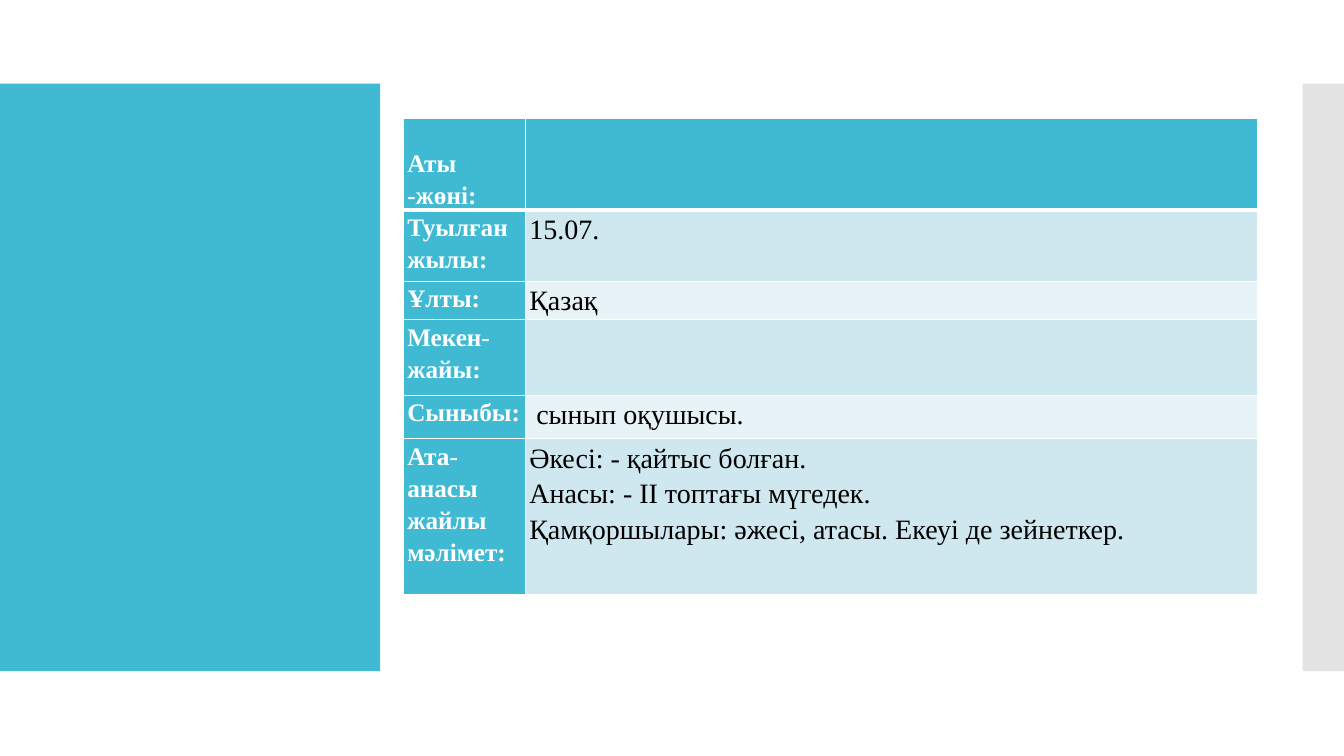
from dataclasses import dataclass

from lxml.etree import SubElement
from pptx import Presentation
from pptx.dml.color import RGBColor
from pptx.enum.shapes import MSO_SHAPE
from pptx.enum.text import MSO_ANCHOR
from pptx.oxml.ns import qn
from pptx.util import Inches, Pt


@dataclass(frozen=True)
class Theme:
    """Colours, font and type sizes of the slide."""
    accent: str = "40BAD2"
    side_strip: str = "C8C8C8"
    dark_band: str = "CFE7EE"
    light_band: str = "E8F3F7"
    white: str = "FFFFFF"
    black: str = "000000"
    font: str = "Times New Roman"
    label_size: int = 18
    value_size: int = 20
    line_spacing: float = 1.15
    rule: int = 1
    header_rule: int = 3


THEME = Theme()
COLUMN_WIDTHS = (1.21, 7.26)
PROFILE = (
    ("Аты -жөні:", "", 0.91),
    ("Туылған жылы:", "15.07.", 0.71),
    ("Ұлты:", "Қазақ", 0.38),
    ("Мекен-жайы:", "", 0.75),
    ("Сыныбы:", " сынып оқушысы.", 0.43),
    ("Ата-анасы жайлы мәлімет:",
     "Әкесі: - қайтыс болған.\nАнасы: - ІІ топтағы мүгедек.\n"
     "Қамқоршылары: әжесі, атасы. Екеуі де зейнеткер.", 1.55),
)


def add_panel(slide, box, color, opacity=100):
    """Draw a borderless rectangle in the given box."""
    panel = slide.shapes.add_shape(MSO_SHAPE.RECTANGLE, *map(Inches, box))
    panel.shadow.inherit = False
    panel.line.fill.background()
    panel.fill.solid()
    panel.fill.fore_color.rgb = RGBColor.from_string(color)
    if opacity < 100:
        color_element = panel.fill._xPr.find(qn("a:solidFill"))[0]
        SubElement(color_element, qn("a:alpha"), val=str(opacity * 1000))


def set_borders(cell, top, bottom):
    """Give a cell white borders with the given top and bottom widths."""
    properties = cell._tc.get_or_add_tcPr()
    widths = {"lnL": THEME.rule, "lnR": THEME.rule, "lnT": top, "lnB": bottom}
    for side, width in widths.items():
        border = SubElement(properties, qn(f"a:{side}"), w=str(Pt(width)))
        fill = SubElement(border, qn("a:solidFill"))
        SubElement(fill, qn("a:srgbClr"), val=THEME.white)


def fill_cell(cell, text, background, color, size, bold):
    """Write and format the text of one table cell."""
    cell.margin_left = cell.margin_right = Inches(0.04)
    cell.margin_top = cell.margin_bottom = 0
    cell.fill.solid()
    cell.fill.fore_color.rgb = RGBColor.from_string(background)
    cell.text_frame.text = text
    for paragraph in cell.text_frame.paragraphs:
        paragraph.line_spacing = THEME.line_spacing
        paragraph.font.size = Pt(size)
        for run in paragraph.runs:
            run.font.name = THEME.font
            run.font.size = Pt(size)
            run.font.bold = bold
            run.font.color.rgb = RGBColor.from_string(color)


def add_profile_table(slide, left, top):
    """Place the pupil's profile table with its top left corner as given."""
    width = sum(COLUMN_WIDTHS)
    height = sum(row_height for _, _, row_height in PROFILE)
    frame = slide.shapes.add_table(len(PROFILE), len(COLUMN_WIDTHS),
                                   *map(Inches, (left, top, width, height)))
    table = frame.table
    table.first_col = True
    for column, column_width in zip(table.columns, COLUMN_WIDTHS):
        column.width = Inches(column_width)
    for index, (label, value, row_height) in enumerate(PROFILE):
        table.rows[index].height = Inches(row_height)
        label_cell, value_cell = table.rows[index].cells
        for cell in (label_cell, value_cell):
            set_borders(cell,
                        THEME.header_rule if index == 1 else THEME.rule,
                        THEME.header_rule if index == 0 else THEME.rule)
        band = THEME.dark_band if index % 2 else THEME.light_band
        value_fill = band if index else THEME.accent
        fill_cell(label_cell, label, THEME.accent, THEME.white, THEME.label_size, True)
        fill_cell(value_cell, value, value_fill, THEME.black, THEME.value_size, False)
    table.cell(0, 0).vertical_anchor = MSO_ANCHOR.BOTTOM


def main():
    """Build the profile slide and save it."""
    presentation = Presentation()
    presentation.slide_width = Inches(13.33)
    presentation.slide_height = Inches(7.5)
    slide = presentation.slides.add_slide(presentation.slide_layouts[6])
    add_panel(slide, (0, 0.83, 3.77, 5.83), THEME.accent)
    add_panel(slide, (12.92, 0.83, 0.41, 5.83), THEME.side_strip, opacity=50)
    add_profile_table(slide, 4, 1.17)
    presentation.save("out.pptx")


if __name__ == "__main__":
    main()
